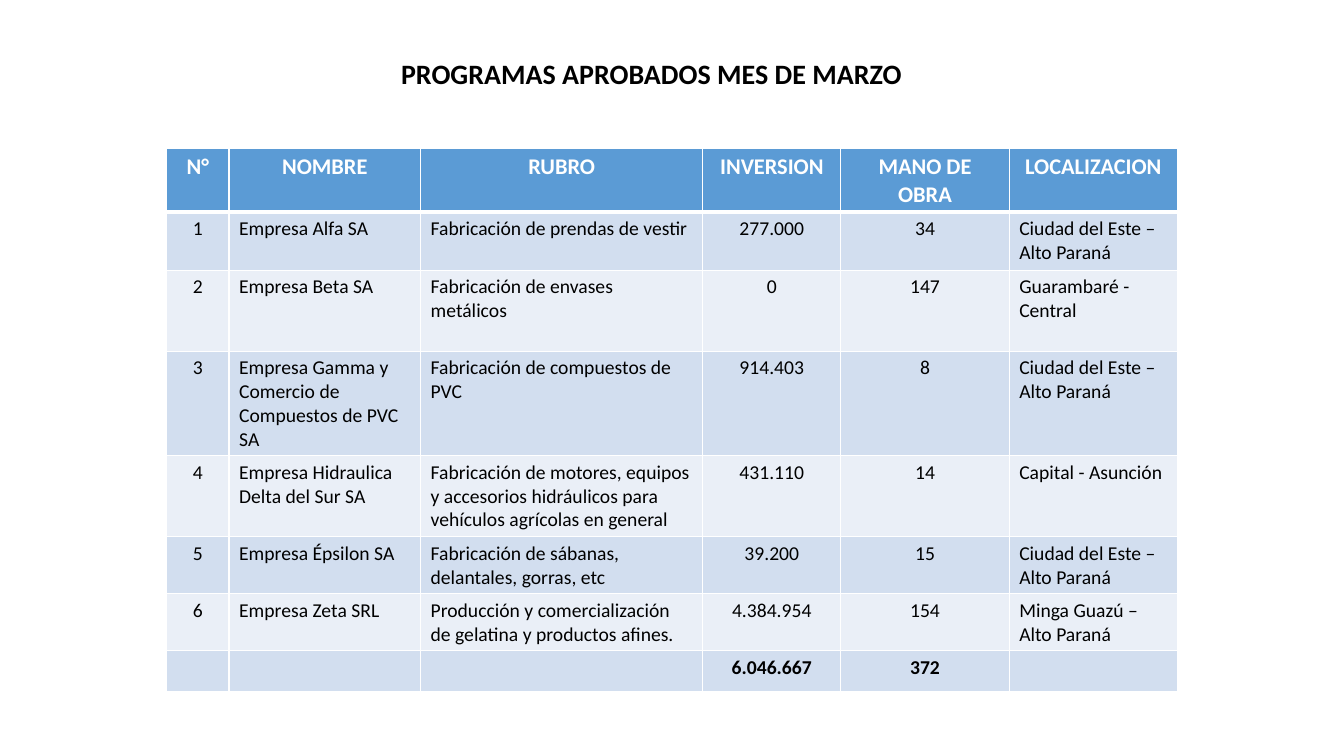
from lxml import etree
from pptx import Presentation
from pptx.dml.color import RGBColor
from pptx.enum.text import MSO_AUTO_SIZE, PP_ALIGN
from pptx.oxml.ns import qn
from pptx.util import Pt

LEFT, CENTER = PP_ALIGN.LEFT, PP_ALIGN.CENTER
FIT_SHAPE = MSO_AUTO_SIZE.SHAPE_TO_FIT_TEXT

BLACK = RGBColor(0x00, 0x00, 0x00)
WHITE = RGBColor(0xFF, 0xFF, 0xFF)
HEADER_BLUE = RGBColor(0x5B, 0x9B, 0xD5)
BAND_DARK = RGBColor(0xD2, 0xDE, 0xEF)
BAND_LIGHT = RGBColor(0xEA, 0xEF, 0xF7)

FONT = "Calibri"
THIN, THICK = Pt(1), Pt(3)

COLUMN_WIDTHS = [44.64, 136.8, 201.6, 98.64, 120.24, 120.24]
ROW_HEIGHTS = [44.3, 41.4, 57.9, 74.3, 57.9, 40.7, 40.7, 29.3]
COLUMN_ALIGNS = [CENTER, LEFT, LEFT, CENTER, CENTER, LEFT]

HEADINGS = ["N°", "NOMBRE", "RUBRO", "INVERSION", "MANO DE OBRA", "LOCALIZACION"]
PROGRAMS = [
    ["1", "Empresa Alfa SA", "Fabricación de prendas de vestir",
     "277.000", "34", "Ciudad del Este – Alto Paraná"],
    ["2", "Empresa Beta SA", "Fabricación de envases metálicos",
     "0", "147", "Guarambaré - Central"],
    ["3", "Empresa Gamma y Comercio de Compuestos de PVC SA",
     "Fabricación de compuestos de PVC",
     "914.403", "8", "Ciudad del Este – Alto Paraná"],
    ["4", "Empresa Hidraulica Delta del Sur SA",
     "Fabricación de motores, equipos y accesorios hidráulicos "
     "para vehículos agrícolas en general",
     "431.110", "14", "Capital - Asunción"],
    ["5", "Empresa Épsilon SA", "Fabricación de sábanas, delantales, gorras, etc",
     "39.200", "15", "Ciudad del Este – Alto Paraná"],
    ["6", "Empresa Zeta SRL",
     "Producción y comercialización de gelatina y productos afines.",
     "4.384.954", "154", "Minga Guazú – Alto Paraná"],
]
TOTALS = ["", "", "", "6.046.667", "372", ""]


def write_text(frame, text, size=14, color=BLACK, bold=False, align=LEFT):
    para = frame.paragraphs[0]
    para.alignment = align
    span = para.add_run()
    span.text = text
    span.font.name = FONT
    span.font.size = Pt(size)
    span.font.bold = bold
    span.font.color.rgb = color


def set_borders(cell, top=THIN, bottom=THIN):
    """Draw white lines on all four sides; they must precede the fill in the XML."""
    properties = cell._tc.get_or_add_tcPr()
    widths = {"a:lnL": THIN, "a:lnR": THIN, "a:lnT": top, "a:lnB": bottom}
    for position, (side, width) in enumerate(widths.items()):
        line = etree.Element(qn(side), w=str(width))
        fill = etree.SubElement(line, qn("a:solidFill"))
        etree.SubElement(fill, qn("a:srgbClr"), val=str(WHITE))
        properties.insert(position, line)


def fill_row(table, index, texts, fill, aligns=COLUMN_ALIGNS, top=THIN, bottom=THIN,
             **text_format):
    for cell, text, align in zip(table.rows[index].cells, texts, aligns):
        cell.fill.solid()
        cell.fill.fore_color.rgb = fill
        set_borders(cell, top, bottom)
        if text:
            write_text(cell.text_frame, text, align=align, **text_format)


def add_title(page, text):
    box = page.shapes.add_textbox(Pt(279.4), Pt(36.7), Pt(375.1), Pt(31.7))
    box.text_frame.word_wrap = False
    box.text_frame.auto_size = FIT_SHAPE
    write_text(box.text_frame, text, size=20, bold=True)


def add_program_table(page):
    frame = page.shapes.add_table(
        len(ROW_HEIGHTS), len(COLUMN_WIDTHS), Pt(119), Pt(106),
        Pt(sum(COLUMN_WIDTHS)), Pt(sum(ROW_HEIGHTS)))
    table = frame.table
    table.first_row = False
    table.horz_banding = False
    for column, width in zip(table.columns, COLUMN_WIDTHS):
        column.width = Pt(width)
    for row, height in zip(table.rows, ROW_HEIGHTS):
        row.height = Pt(height)

    fill_row(table, 0, HEADINGS, HEADER_BLUE, aligns=[CENTER] * len(HEADINGS),
             bottom=THICK, size=16, color=WHITE, bold=True)
    for index, texts in enumerate(PROGRAMS + [TOTALS], start=1):
        fill_row(table, index, texts, BAND_DARK if index % 2 else BAND_LIGHT,
                 top=THICK if index == 1 else THIN, bold=texts is TOTALS)


def main():
    deck = Presentation()
    deck.slide_width, deck.slide_height = Pt(960), Pt(540)
    page = deck.slides.add_slide(deck.slide_layouts[6])
    add_title(page, "PROGRAMAS APROBADOS MES DE MARZO")
    add_program_table(page)
    deck.save("out.pptx")


if __name__ == "__main__":
    main()
